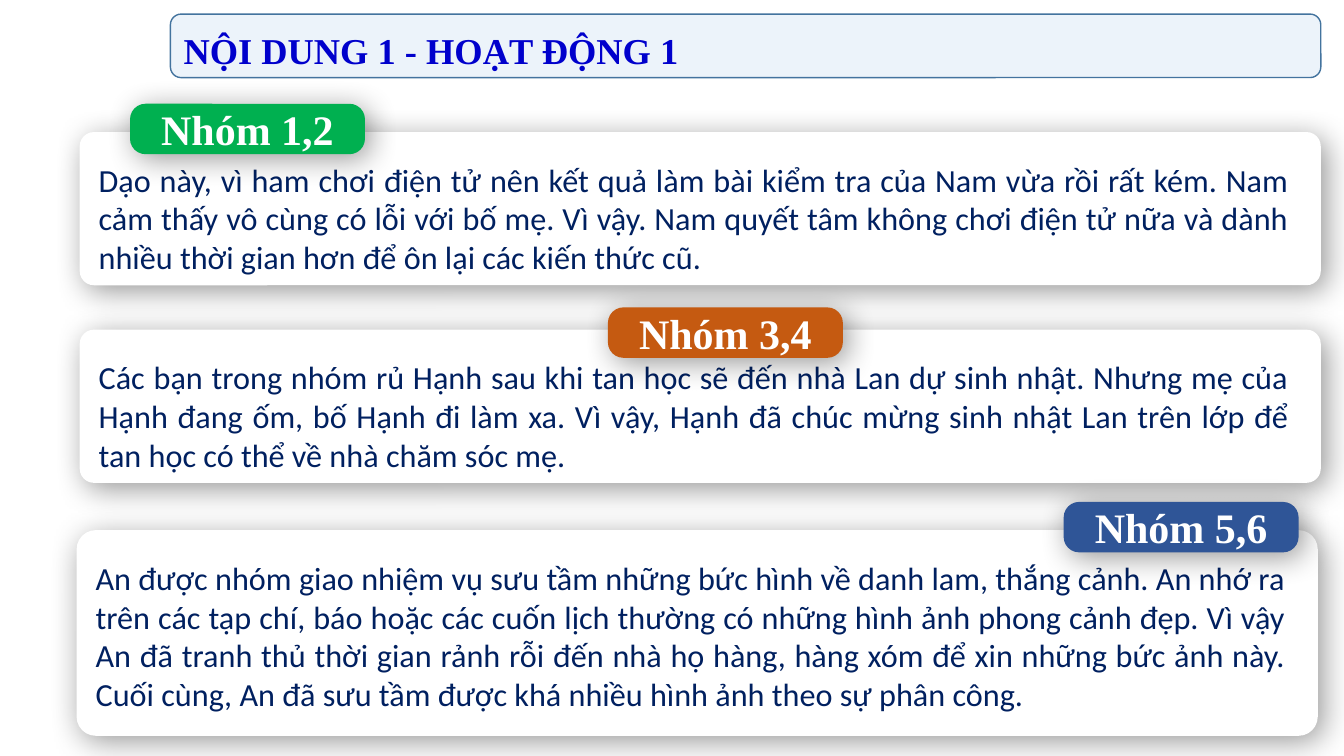
from lxml.etree import SubElement
from pptx import Presentation
from pptx.dml.color import RGBColor
from pptx.enum.shapes import MSO_SHAPE
from pptx.enum.text import MSO_ANCHOR, MSO_AUTO_SIZE, PP_ALIGN
from pptx.oxml.ns import qn
from pptx.util import Inches, Pt

COLORS = {
    "bar": "ECF3FA", "edge": "43739E", "title": "0000CC",
    "white": "FFFFFF", "body": "002060", "shade": "000000",
    "green": "00B050", "orange": "C55A11", "blue": "2F5597",
}

GROUPS = [
    ("Nhóm 1,2", "green", 1.29, 1.03, 0.79, 1.31, 1.52,
     "Dạo này, vì ham chơi điện tử nên kết quả làm bài kiểm tra của Nam vừa rồi rất kém. "
     "Nam cảm thấy vô cùng có lỗi với bố mẹ. Vì vậy. Nam quyết tâm không chơi điện tử nữa "
     "và dành nhiều thời gian hơn để ôn lại các kiến thức cũ."),
    ("Nhóm 3,4", "orange", 6.03, 3.05, 0.79, 3.27, 1.52,
     "Các bạn trong nhóm rủ Hạnh sau khi tan học sẽ đến nhà Lan dự sinh nhật. "
     "Nhưng mẹ của Hạnh đang ốm, bố Hạnh đi làm xa. Vì vậy, Hạnh đã chúc mừng sinh nhật Lan "
     "trên lớp để tan học có thể về nhà chăm sóc mẹ."),
    ("Nhóm 5,6", "blue", 10.55, 4.98, 0.76, 5.26, 2.04,
     "An được nhóm giao nhiệm vụ sưu tầm những bức hình về danh lam, thắng cảnh. "
     "An nhớ ra trên các tạp chí, báo hoặc các cuốn lịch thường có những hình ảnh phong cảnh đẹp. "
     "Vì vậy An đã tranh thủ thời gian rảnh rỗi đến nhà họ hàng, hàng xóm để xin những bức ảnh này. "
     "Cuối cùng, An đã sưu tầm được khá nhiều hình ảnh theo sự phân công."),
]


def color(name):
    return RGBColor.from_string(COLORS[name])


def write(shape, text, size, tint, font="Times New Roman", bold=False,
          align=PP_ALIGN.LEFT, anchor=MSO_ANCHOR.MIDDLE, spacing=1.0):
    frame = shape.text_frame
    frame.word_wrap = True
    frame.auto_size = MSO_AUTO_SIZE.NONE
    frame.vertical_anchor = anchor
    para = frame.paragraphs[0]
    para.alignment = align
    para.line_spacing = spacing
    run = para.add_run()
    run.text = text
    run.font.name = font
    run.font.size = Pt(size)
    run.font.bold = bold
    run.font.color.rgb = color(tint)


def add_box(slide, left, top, width, height, fill, round_by=0.167, edge=None):
    box = slide.shapes.add_shape(MSO_SHAPE.ROUNDED_RECTANGLE, Inches(left),
                                 Inches(top), Inches(width), Inches(height))
    box.adjustments[0] = round_by
    box.shadow.inherit = False
    box.fill.solid()
    box.fill.fore_color.rgb = color(fill)
    if edge:
        box.line.color.rgb = color(edge)
        box.line.width = Pt(1)
    else:
        box.line.fill.background()
    return box


def add_shade(box):
    effects = box.element.spPr.find(qn("a:effectLst"))
    shade = SubElement(effects, qn("a:outerShdw"), blurRad=str(Pt(22)),
                       dist=str(Pt(5)), dir=str(45 * 60000),
                       algn="tl", rotWithShape="0")
    tint = SubElement(shade, qn("a:srgbClr"), val=COLORS["shade"])
    SubElement(tint, qn("a:alpha"), val="40000")


def add_title(slide, text):
    add_box(slide, 1.69, 0.14, 11.41, 0.63, "bar", edge="edge")
    title = slide.shapes.title
    title.left, title.top = Inches(1.72), Inches(0.14)
    title.width, title.height = Inches(11.35), Inches(0.63)
    slide.shapes.element.append(title.element)
    write(title, text, 26, "title", bold=True, spacing=1.2)


def add_group(slide, name, fill, tab_left, tab_top, left, top, height, story):
    add_shade(add_box(slide, left, top, 12.31, height, "white", 0.093))
    body = slide.shapes.add_textbox(Inches(left + 0.09), Inches(top + 0.23),
                                    Inches(12.02), Inches(height - 0.26))
    write(body, story, 23, "body", font="Calibri",
          align=PP_ALIGN.JUSTIFY, anchor=MSO_ANCHOR.TOP)
    tab = add_box(slide, tab_left, tab_top, 2.33, 0.5, fill, 0.307)
    add_shade(tab)
    write(tab, name, 30, "white", bold=True, align=PP_ALIGN.CENTER)


def main():
    deck = Presentation()
    deck.slide_width, deck.slide_height = Inches(13.33), Inches(7.5)
    slide = deck.slides.add_slide(deck.slide_layouts[5])
    add_title(slide, "NỘI DUNG 1 - HOẠT ĐỘNG 1")
    for group in GROUPS:
        add_group(slide, *group)
    deck.save("out.pptx")


if __name__ == "__main__":
    main()
